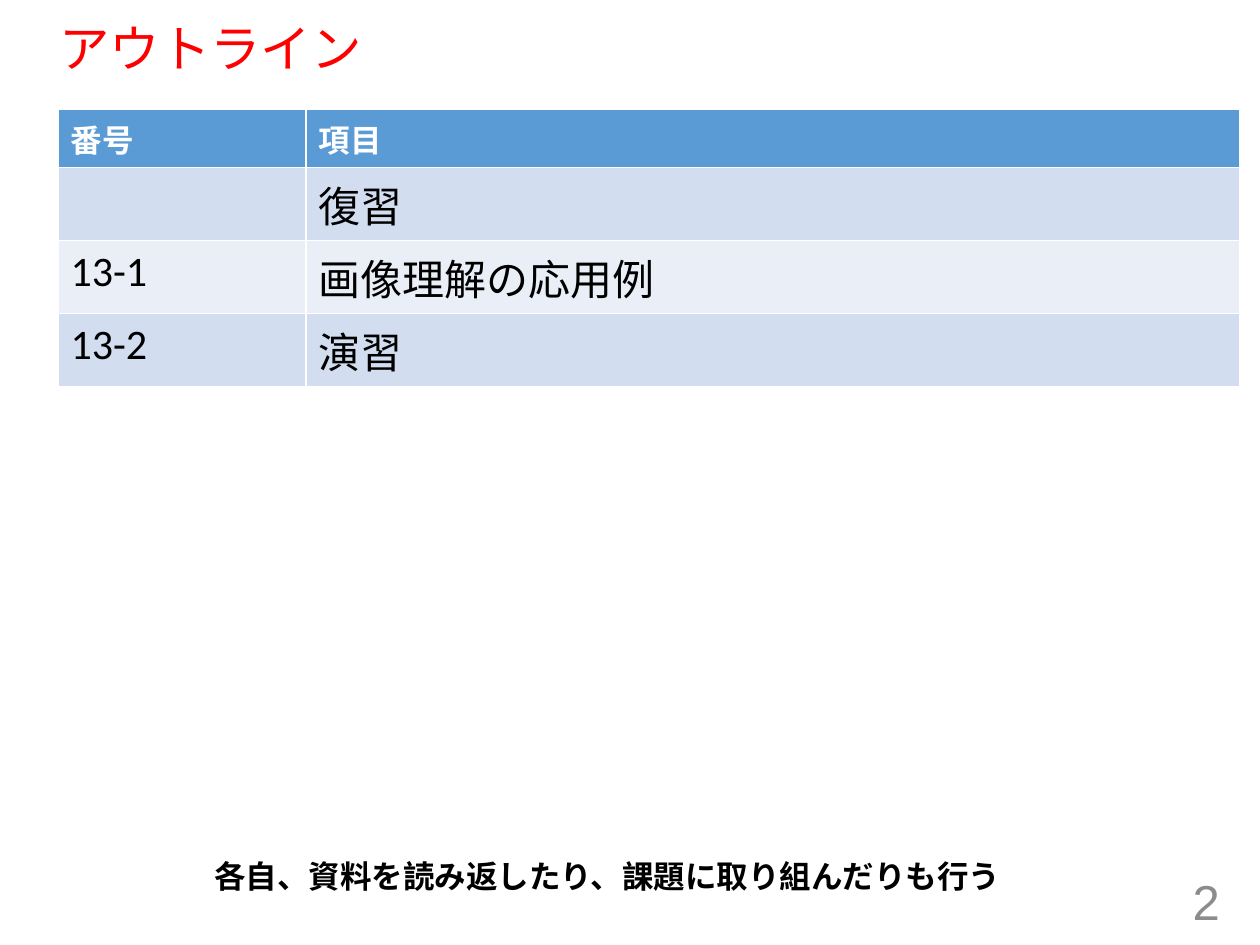
from pptx import Presentation
from pptx.dml.color import RGBColor
from pptx.enum import text
from pptx.util import Inches, Pt

ROWS = [("番号", "項目"), ("", "復習"), ("13-1", "画像理解の応用例"), ("13-2", "演習")]


def paint(hue):
    return RGBColor.from_string(hue)


def write(frame, words, hue, align=None, **font):
    para = frame.paragraphs[0]
    para.alignment = align
    run = para.add_run()
    run.text = words
    run.font.color.rgb = paint(hue)
    for key, value in font.items():
        setattr(run.font, key, value)
    return para


def add_title(slide, box):
    title = slide.shapes.title
    title.left, title.top, title.width, title.height = map(Inches, box)
    frame = title.text_frame
    frame.vertical_anchor = text.MSO_ANCHOR.MIDDLE
    para = write(frame, "アウトライン", "FF0000", text.PP_ALIGN.LEFT,
                 name="Arial", size=Pt(28.8))
    para.line_spacing = 0.9


def add_topics(slide, box):
    """Table of section numbers and topics."""
    grid = slide.shapes.add_table(len(ROWS), 2, *map(Inches, box)).table
    first = 1.97
    for col, width in zip(grid.columns, (first, box[2] - first)):
        col.width = Inches(width)
    for r, words in enumerate(ROWS):
        head = r == 0
        grid.rows[r].height = Inches(0.46 if head else 0.58)
        fill = "5B9BD5" if head else ("EAEFF7", "D2DEEF")[r % 2]
        for c, word in enumerate(words):
            cell = grid.cell(r, c)
            cell.fill.solid()
            cell.fill.fore_color.rgb = paint(fill)
            if word:
                write(cell.text_frame, word, "FFFFFF" if head else "000000",
                      name="Calibri", size=Pt(18 if head else 24), bold=head)


def add_label(slide, box, words, hue, anchor, align, wrap, **font):
    frame = slide.shapes.add_textbox(*map(Inches, box)).text_frame
    frame.word_wrap = wrap
    frame.vertical_anchor = anchor
    write(frame, words, hue, align, **font)


def main():
    deck = Presentation()
    deck.slide_width, deck.slide_height = Inches(10), Inches(7.5)
    slide = deck.slides.add_slide(deck.slide_layouts[5])
    add_title(slide, (0.37, 0.15, 9.25, 0.51))
    add_label(slide, (7.53, 6.95, 2.25, 0.4), "2", "8C8C8C",
              text.MSO_ANCHOR.MIDDLE, text.PP_ALIGN.RIGHT, True,
              name="Arial", size=Pt(28))
    add_topics(slide, (0.46, 0.87, 9.38, 2.2))
    add_label(slide, (1.6, 6.44, 6.51, 0.71),
              "各自、資料を読み返したり、課題に取り組んだりも行う", "000000",
              text.MSO_ANCHOR.BOTTOM, text.PP_ALIGN.LEFT, False,
              name="Calibri", size=Pt(18), bold=True)
    deck.save("out.pptx")


if __name__ == "__main__":
    main()
